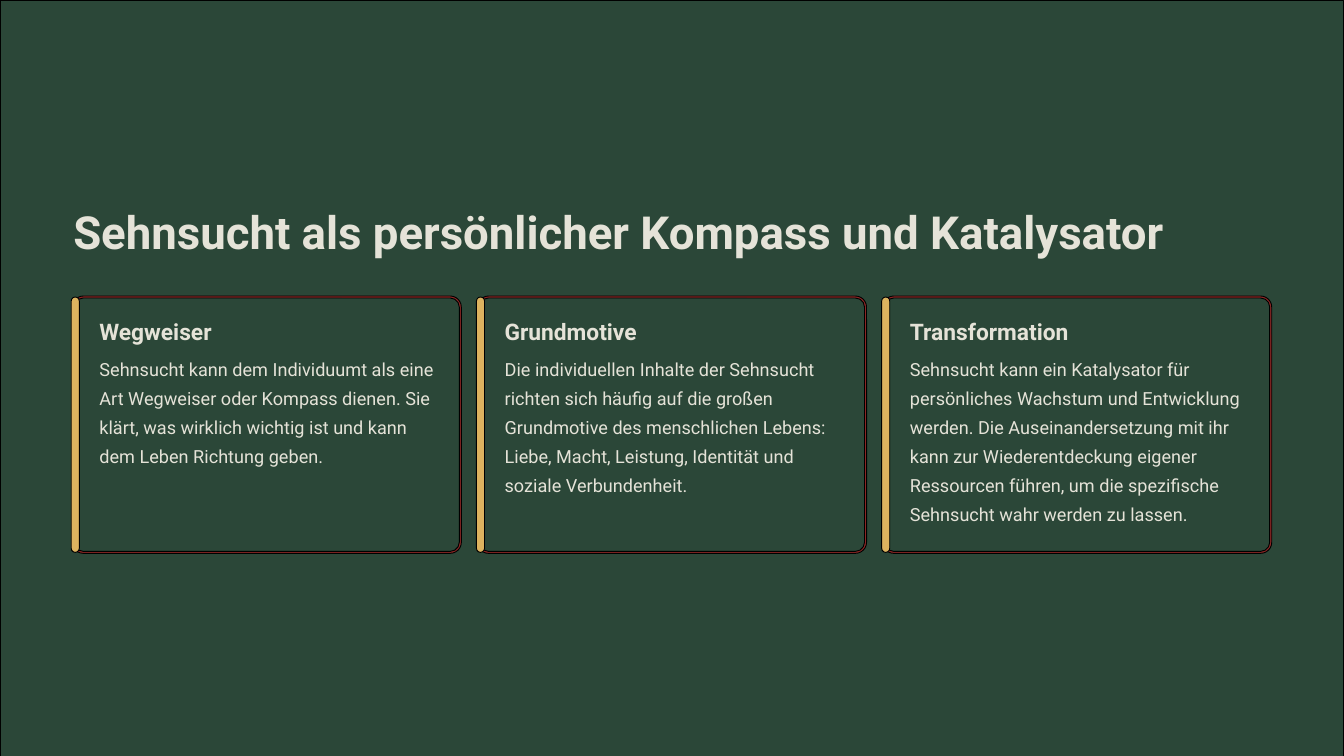
from pptx import Presentation
from pptx.dml.color import RGBColor
from pptx.enum.shapes import MSO_SHAPE
from pptx.enum.text import MSO_AUTO_SIZE
from pptx.util import Inches, Pt

RECTANGLE = MSO_SHAPE.RECTANGLE
ROUNDED = MSO_SHAPE.ROUNDED_RECTANGLE
GROW = MSO_AUTO_SIZE.SHAPE_TO_FIT_TEXT

COLORS = {
    "outline": "000000",
    "green": "2B4738",
    "red": "8C2725",
    "gold": "DDB35F",
    "cream": "E5E3D8",
}
FONT = "Roboto"

TITLE = "Sehnsucht als persönlicher Kompass und Katalysator"
# Heading, heading width, body, number of body lines
CARDS = [
    ("Wegweiser", 1.76,
     "Sehnsucht kann dem Individuumt als eine Art Wegweiser oder Kompass "
     "dienen. Sie klärt, was wirklich wichtig ist und kann dem Leben "
     "Richtung geben.", 4),
    ("Grundmotive", 2.03,
     "Die individuellen Inhalte der Sehnsucht richten sich häufig auf die "
     "großen Grundmotive des menschlichen Lebens: Liebe, Macht, Leistung, "
     "Identität und soziale Verbundenheit.", 5),
    ("Transformation", 2.42,
     "Sehnsucht kann ein Katalysator für persönliches Wachstum und "
     "Entwicklung werden. Die Auseinandersetzung mit ihr kann zur "
     "Wiederentdeckung eigener Ressourcen führen, um die spezifische "
     "Sehnsucht wahr werden zu lassen.", 6),
]

SLIDE_WIDTH, SLIDE_HEIGHT = 20, 11.25
MARGIN = 1.09
CARD_TOP, CARD_WIDTH, CARD_HEIGHT = 4.42, 5.76, 3.8
CARD_PITCH = 6.03
CARD_RADIUS = 0.15
EDGE = 0.015  # half the width of the red frame
BAR_WIDTH = 0.12
TEXT_INDENT = 0.39
LINE_HEIGHT = 0.43


def color(name):
    return RGBColor.from_string(COLORS[name])


def add_panel(slide, left, top, width, height, fill, radius=0):
    kind = ROUNDED if radius else RECTANGLE
    panel = slide.shapes.add_shape(
        kind, Inches(left), Inches(top), Inches(width), Inches(height))
    if radius:
        panel.adjustments[0] = radius / min(width, height)
    panel.shadow.inherit = False
    panel.fill.solid()
    panel.fill.fore_color.rgb = color(fill)
    panel.line.color.rgb = color("outline")
    panel.line.width = Pt(1)


def add_text(slide, text, left, top, width, height, *, size, spacing, bold=False):
    box = slide.shapes.add_textbox(
        Inches(left), Inches(top), Inches(width), Inches(height))
    frame = box.text_frame
    frame.margin_left = frame.margin_right = 0
    frame.margin_top = frame.margin_bottom = 0
    frame.word_wrap = True
    frame.auto_size = GROW
    para = frame.paragraphs[0]
    para.line_spacing = Pt(spacing)
    span = para.add_run()
    span.text = text
    span.font.name = FONT
    span.font.size = Pt(size)
    span.font.bold = bold
    span.font.color.rgb = color("cream")


def add_card(slide, left, heading, heading_width, body, lines):
    for inset, fill in ((-EDGE, "red"), (EDGE, "green")):
        add_panel(slide, left + inset, CARD_TOP + inset,
                  CARD_WIDTH - 2 * inset, CARD_HEIGHT - 2 * inset,
                  fill, CARD_RADIUS - inset)
    add_panel(slide, left - 0.03, CARD_TOP, BAR_WIDTH, CARD_HEIGHT,
              "gold", BAR_WIDTH / 2)
    text_left = left + TEXT_INDENT
    add_text(slide, heading, text_left, 4.72, heading_width, 0.4,
             size=24.4, spacing=30, bold=True)
    add_text(slide, body, text_left, 5.22, 5.06, lines * LINE_HEIGHT,
             size=19.4, spacing=31.2)


def main():
    deck = Presentation()
    deck.slide_width = Inches(SLIDE_WIDTH)
    deck.slide_height = Inches(SLIDE_HEIGHT)
    slide = deck.slides.add_slide(deck.slide_layouts[6])
    slide.background.fill.solid()
    slide.background.fill.fore_color.rgb = color("outline")

    add_panel(slide, 0, 0, SLIDE_WIDTH, SLIDE_HEIGHT, "green")
    add_text(slide, TITLE, MARGIN, 3.01, 16.71, 0.82,
             size=48.8, spacing=60.6, bold=True)
    for index, card in enumerate(CARDS):
        add_card(slide, MARGIN + index * CARD_PITCH, *card)
    deck.save("out.pptx")


if __name__ == "__main__":
    main()
